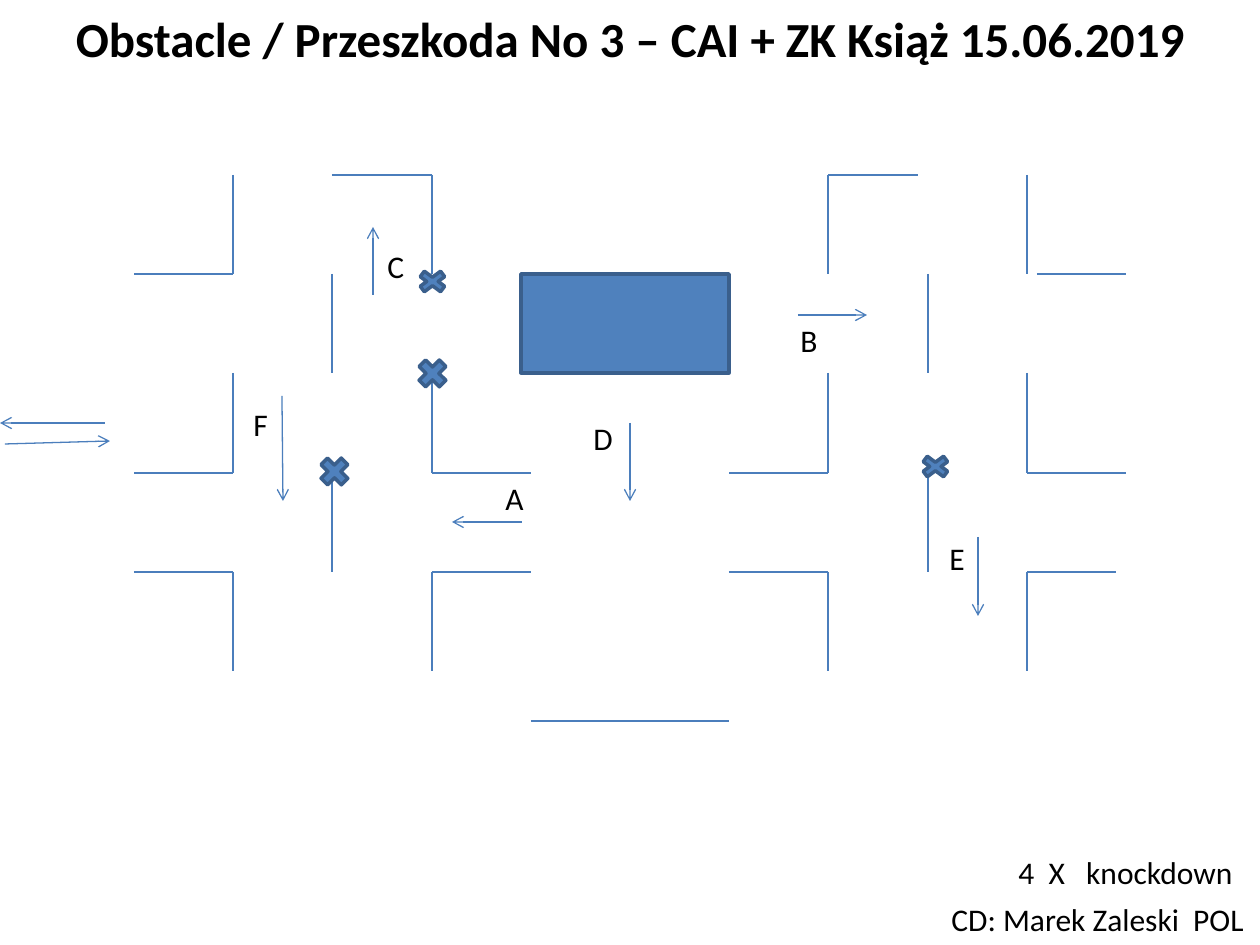
from dataclasses import dataclass
from itertools import pairwise

from lxml.etree import SubElement
from pptx import Presentation
from pptx.dml.color import RGBColor
from pptx.enum.shapes import MSO_CONNECTOR, MSO_SHAPE
from pptx.enum.text import MSO_ANCHOR, MSO_AUTO_SIZE, PP_ALIGN
from pptx.oxml.ns import qn
from pptx.util import Pt

EMU_PER_PX = 914400 / 126
PAGE_WIDTH, PAGE_HEIGHT = 1260, 945
GRID_LEFT, GRID_TOP, GRID_STEP = 134, 175, 99.2


@dataclass(frozen=True)
class Theme:
    font: str = "Calibri"
    ink: str = "000000"
    fill: str = "4F81BD"
    outline: str = "3A5F8C"
    wall: str = "4B7EBC"
    title_size: int = 28
    label_size: int = 18
    wall_width: float = 0.75
    outline_width: float = 2


def px(*lengths):
    return [round(length * EMU_PER_PX) for length in lengths]


def grid_point(column, row):
    return round(GRID_LEFT + GRID_STEP * column), round(GRID_TOP + GRID_STEP * row)


def write_text(frame, text, *, font, size, color, bold=False, align=PP_ALIGN.LEFT):
    para = frame.paragraphs[0]
    para.alignment = align
    span = para.add_run()
    span.text = text
    span.font.name = font
    span.font.size = Pt(size)
    span.font.bold = bold
    span.font.color.rgb = RGBColor.from_string(color)


class Sketch:
    def __init__(self, page, theme):
        self.page = page
        self.theme = theme

    def title(self, text, left, top, width, height):
        box = self.page.shapes.title
        box.left, box.top, box.width, box.height = px(left, top, width, height)
        box.text_frame.auto_size = MSO_AUTO_SIZE.NONE
        box.text_frame.vertical_anchor = MSO_ANCHOR.MIDDLE
        write_text(box.text_frame, text, font=self.theme.font, size=self.theme.title_size,
                   color=self.theme.ink, bold=True, align=PP_ALIGN.CENTER)

    def label(self, text, left, top, width, height=50):
        box = self.page.shapes.add_textbox(*px(left, top, width, height))
        box.text_frame.word_wrap = False
        box.text_frame.auto_size = MSO_AUTO_SIZE.SHAPE_TO_FIT_TEXT
        write_text(box.text_frame, text, font=self.theme.font,
                   size=self.theme.label_size, color=self.theme.ink)

    def line(self, start, end, arrow=False):
        connector = self.page.shapes.add_connector(
            MSO_CONNECTOR.STRAIGHT, *px(*start, *end))
        connector.line.color.rgb = RGBColor.from_string(self.theme.wall)
        connector.line.width = Pt(self.theme.wall_width)
        if arrow:
            SubElement(connector.line._get_or_add_ln(), qn("a:tailEnd"), type="arrow")
        SubElement(connector._element.spPr, qn("a:effectLst"))

    def wall(self, *corners):
        for start, end in pairwise(corners):
            self.line(grid_point(*start), grid_point(*end))

    def solid(self, kind, left, top, width, height):
        shape = self.page.shapes.add_shape(kind, *px(left, top, width, height))
        shape.shadow.inherit = False
        shape.fill.solid()
        shape.fill.fore_color.rgb = RGBColor.from_string(self.theme.fill)
        shape.line.color.rgb = RGBColor.from_string(self.theme.outline)
        shape.line.width = Pt(self.theme.outline_width)


WALLS = [
    [(1, 0), (1, 1), (0, 1)],
    [(2, 0), (3, 0), (3, 1)],
    [(2, 1), (2, 2)],
    [(1, 2), (1, 3), (0, 3)],
    [(3, 2), (3, 3), (4, 3)],
    [(2, 3), (2, 4)],
    [(0, 4), (1, 4), (1, 5)],
    [(4, 4), (3, 4), (3, 5)],
    [(7.9, 0), (7, 0), (7, 1)],
    [(9, 0), (9, 1)],
    [(9.1, 1), (10, 1)],
    [(8, 1), (8, 2)],
    [(7, 2), (7, 3), (6, 3)],
    [(9, 2), (9, 3), (10, 3)],
    [(8, 3), (8, 4)],
    [(6, 4), (7, 4), (7, 5)],
    [(9.9, 4), (9, 4), (9, 5)],
    [(4, 5.5), (6, 5.5)],
]

PASSAGES = [
    ((105, 423), (0, 423)),
    ((5, 444), (110, 441)),
]

GATES = [
    ("A", (493, 473, 44), (522, 522), (452, 522)),
    ("B", (788, 315, 43), (798, 315), (867, 315)),
    ("C", (375, 241, 43), (373, 295), (373, 227)),
    ("D", (581, 413, 45), (630, 423), (630, 501)),
    ("E", (937, 533, 40), (978, 537), (978, 616)),
    ("F", (241, 399, 40), (282, 396), (283, 501)),
]

KNOCKDOWNS = [(413, 267, 29), (315, 452, 39), (413, 354, 39), (916, 452, 29)]
KNOCKDOWN_WIDTH = 39


def main():
    deck = Presentation()
    deck.slide_width, deck.slide_height = px(PAGE_WIDTH, PAGE_HEIGHT)
    sketch = Sketch(deck.slides.add_slide(deck.slide_layouts[5]), Theme())

    sketch.title("Obstacle / Przeszkoda No 3 – CAI + ZK Książ 15.06.2019",
                 0, 0, PAGE_WIDTH, 76)
    sketch.solid(MSO_SHAPE.RECTANGLE, 521, 274, 208, 99)
    for corners in WALLS:
        sketch.wall(*corners)
    for start, end in PASSAGES:
        sketch.line(start, end, arrow=True)
    for letter, place, start, end in GATES:
        sketch.line(start, end, arrow=True)
        sketch.label(letter, *place)
    for left, top, height in KNOCKDOWNS:
        sketch.solid(MSO_SHAPE.MATH_MULTIPLY, left, top, KNOCKDOWN_WIDTH, height)
    sketch.label("4  X   knockdown", 1006, 847, 242)
    sketch.label("CD: Marek Zaleski  POL", 939, 894, 321)

    deck.save("out.pptx")


if __name__ == "__main__":
    main()
